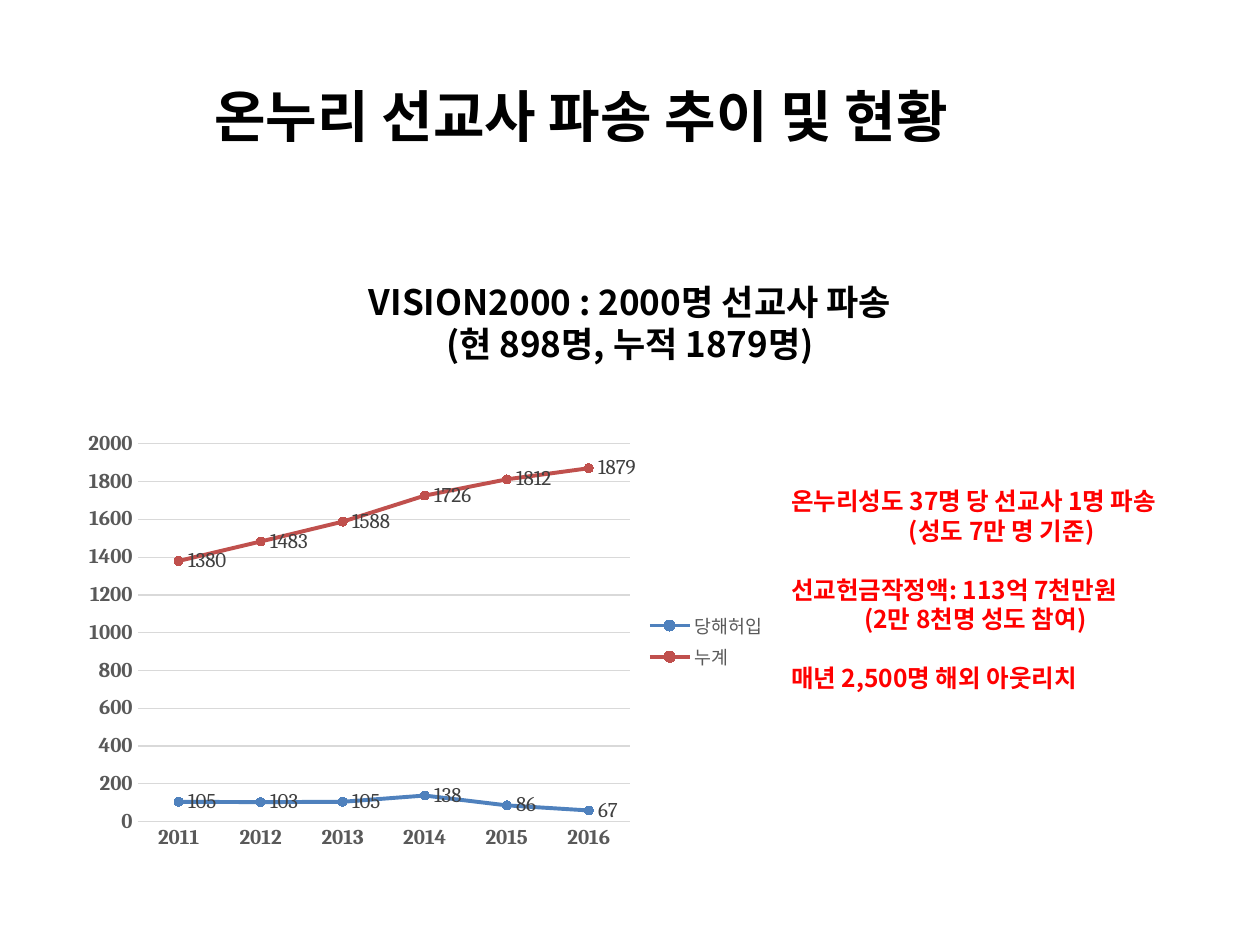
from pptx import Presentation
from pptx import util as u
from pptx.chart.data import CategoryChartData
from pptx.dml.color import RGBColor
from pptx.enum import chart as charts, text
from pptx.oxml.ns import qn

WIDTH, HEIGHT = u.Inches(10), u.Inches(7.5)
HANGUL, LATIN = "Noto Sans CJK KR", "Cambria"
COLORS = {
    "black": "000000", "red": "FF0000", "axis": "595959", "label": "404040",
    "grid": "D9D9D9", "yearly": "4F81BD", "total": "C0504D",
}
YEARS = ["2011", "2012", "2013", "2014", "2015", "2016"]
SERIES = [
    ("당해허입", [105, 103, 105, 138, 86, 59], "yearly", "67"),
    ("누계", [1380, 1483, 1588, 1726, 1812, 1871], "total", "1879"),
]
LEFT, CENTER = text.PP_ALIGN.LEFT, text.PP_ALIGN.CENTER


def color(name):
    return RGBColor.from_string(COLORS[name])


def apply(target, **values):
    for name, value in values.items():
        setattr(target, name, value)


def box(left, top, width, height):
    return (u.Emu(round(WIDTH * left)), u.Emu(round(HEIGHT * top)),
            u.Emu(round(WIDTH * width)), u.Emu(round(HEIGHT * height)))


def style_font(font, size, color_name, bold=False, name=LATIN):
    apply(font, size=u.Pt(size), bold=bold, name=name)
    font.color.rgb = color(color_name)


def style_line(line, color_name, width):
    line.color.rgb = color(color_name)
    line.width = u.Pt(width)


def write(frame, lines, size, color_name):
    apply(frame, word_wrap=True, auto_size=text.MSO_AUTO_SIZE.NONE,
          vertical_anchor=text.MSO_ANCHOR.TOP)
    for index, (content, alignment, indent, gap) in enumerate(lines):
        paragraph = frame.paragraphs[0] if index == 0 else frame.add_paragraph()
        apply(paragraph, alignment=alignment, space_before=u.Pt(gap))
        paragraph._p.get_or_add_pPr().set("marL", str(u.Inches(indent)))
        run = paragraph.add_run()
        run.text = content
        style_font(run.font, size, color_name, True, HANGUL)
        east_asian = run._r.get_or_add_rPr().makeelement(
            qn("a:ea"), {"typeface": HANGUL})
        run.font._element.find(qn("a:latin")).addnext(east_asian)


def add_title(slide, area, line, size):
    title = slide.shapes.title
    apply(title, **dict(zip(("left", "top", "width", "height"), area)))
    write(title.text_frame, [line], size, "black")


def add_text(slide, area, lines, size, color_name):
    shape = slide.shapes.add_textbox(*area)
    write(shape.text_frame, lines, size, color_name)


def style_axis(axis):
    apply(axis, major_tick_mark=charts.XL_TICK_MARK.NONE,
          minor_tick_mark=charts.XL_TICK_MARK.NONE)
    style_font(axis.tick_labels.font, 12, "axis", True)


def style_series(series, color_name, last_label):
    series.smooth = False
    style_line(series.format.line, color_name, 2.25)
    apply(series.marker, style=charts.XL_MARKER_STYLE.CIRCLE, size=5)
    series.marker.format.fill.solid()
    series.marker.format.fill.fore_color.rgb = color(color_name)
    style_line(series.marker.format.line, color_name, 0.75)
    apply(series.data_labels, show_value=True,
          position=charts.XL_LABEL_POSITION.RIGHT)
    style_font(series.data_labels.font, 12, "label")
    label = series.points[len(YEARS) - 1].data_label
    run = label.text_frame.paragraphs[0].add_run()
    run.text = last_label
    style_font(run.font, 12, "label")
    label.position = charts.XL_LABEL_POSITION.RIGHT


def add_line_chart(slide, area):
    data = CategoryChartData()
    data.categories = YEARS
    for name, values, *_ in SERIES:
        data.add_series(name, values)
    chart = slide.shapes.add_chart(
        charts.XL_CHART_TYPE.LINE_MARKERS, *area, data).chart
    apply(chart, has_title=False, has_legend=True)
    style_font(chart.font, 10, "black")
    apply(chart.legend, position=charts.XL_LEGEND_POSITION.RIGHT,
          include_in_layout=False)
    style_font(chart.legend.font, 10.5, "axis")
    for axis in (chart.category_axis, chart.value_axis):
        style_axis(axis)
    style_line(chart.category_axis.format.line, "grid", 0.75)
    chart.value_axis.format.line.fill.background()
    apply(chart.value_axis, minimum_scale=0, maximum_scale=2000, major_unit=200)
    style_line(chart.value_axis.major_gridlines.format.line, "grid", 0.75)
    chart.plots[0].vary_by_categories = False
    for series, (_, _, color_name, last_label) in zip(chart.plots[0].series, SERIES):
        style_series(series, color_name, last_label)


def main():
    presentation = Presentation()
    apply(presentation, slide_width=WIDTH, slide_height=HEIGHT)
    slide = presentation.slides.add_slide(presentation.slide_layouts[5])
    add_title(slide, box(0.11, 0.08, 0.78, 0.07),
              ("온누리 선교사 파송 추이 및 현황", LEFT, 0.5, 0), 32)
    add_text(slide, box(0.075, 0.29, 0.85, 0.1), [
        ("VISION2000 : 2000명 선교사 파송", CENTER, 0, 0),
        ("(현 898명, 누적 1879명)", CENTER, 0, 0),
    ], 20, "black")
    add_line_chart(slide, box(0.059, 0.448, 0.559, 0.461))
    add_text(slide, box(0.618, 0.508, 0.354, 0.296), [
        ("온누리성도 37명 당 선교사 1명 파송", LEFT, 0, 0),
        ("(성도 7만 명 기준)", CENTER, 0, 0),
        ("선교헌금작정액: 113억 7천만원", LEFT, 0, 17),
        ("(2만 8천명 성도 참여)", LEFT, 0.58, 0),
        ("매년 2,500명 해외 아웃리치", LEFT, 0, 17),
    ], 14, "red")
    presentation.save("out.pptx")


if __name__ == "__main__":
    main()
